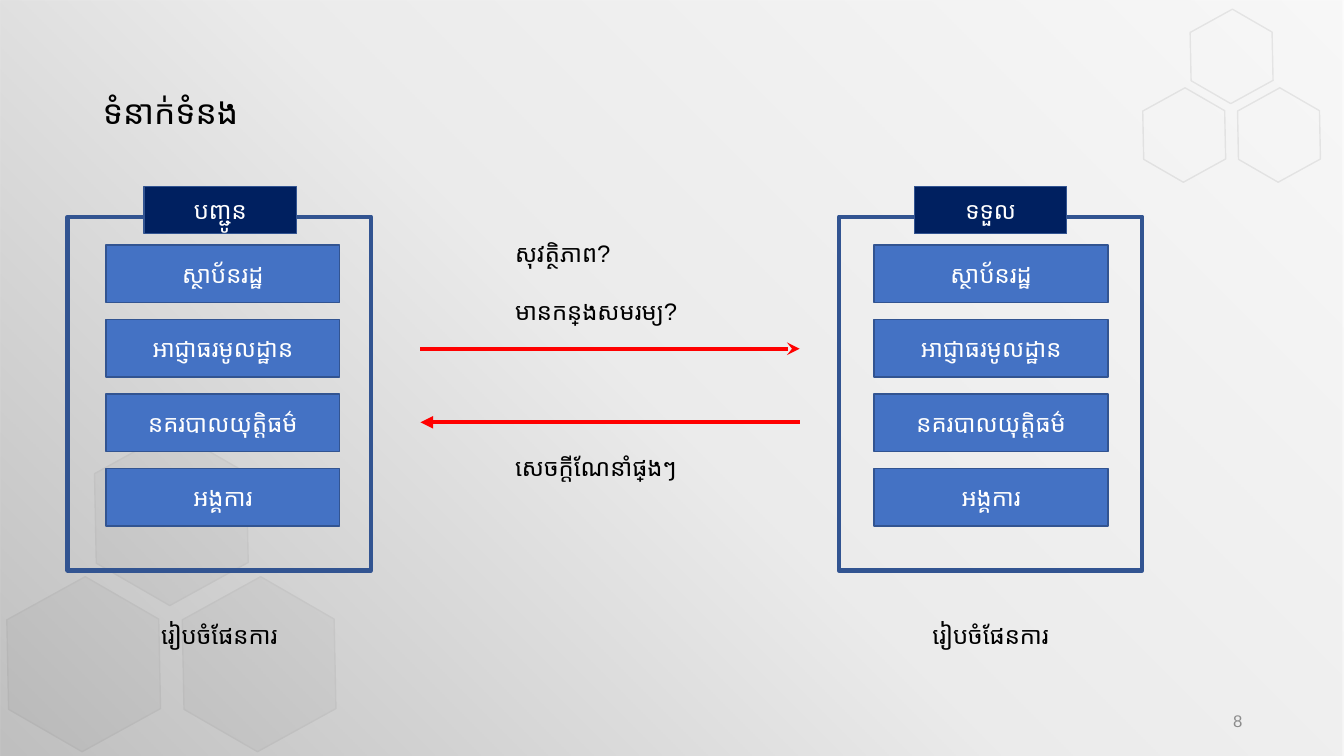
from lxml import etree
from pptx import Presentation
from pptx.dml.color import RGBColor
from pptx.enum.shapes import MSO_CONNECTOR, MSO_SHAPE
from pptx.enum.text import MSO_ANCHOR, PP_ALIGN
from pptx.oxml import parse_xml
from pptx.oxml.ns import qn
from pptx.util import Inches, Pt

RECT, HEXAGON = MSO_SHAPE.RECTANGLE, MSO_SHAPE.HEXAGON
STRAIGHT = MSO_CONNECTOR.STRAIGHT
TOP, MIDDLE = MSO_ANCHOR.TOP, MSO_ANCHOR.MIDDLE
LEFT, CENTER, RIGHT = PP_ALIGN.LEFT, PP_ALIGN.CENTER, PP_ALIGN.RIGHT

BLACK = RGBColor(0x00, 0x00, 0x00)
WHITE = RGBColor(0xFF, 0xFF, 0xFF)
GRAY = RGBColor(0x8C, 0x8C, 0x8C)
SILVER = RGBColor(0xD9, 0xD9, 0xD9)
PALE = RGBColor(0xF2, 0xF2, 0xF2)
PALE_EDGE = RGBColor(0xE7, 0xE6, 0xE6)
BLUE = RGBColor(0x44, 0x72, 0xC4)
EDGE = RGBColor(0x32, 0x54, 0x91)
NAVY = RGBColor(0x00, 0x20, 0x60)
RED = RGBColor(0xFF, 0x00, 0x00)

# Content
TITLE = "ទំនាក់ទំនង"
PAGE_NUMBER = "8"
AGENCIES = ["ស្ថាប័នរដ្ឋ", "អាជ្ញាធរមូលដ្ឋាន", "នគរបាលយុត្តិធម៌", "អង្គការ"]
CAPTION = "រៀបចំផែនការ"
# header, panel left, card left, header left
PANELS = [("បញ្ជូន", 0.67, 1.05, 1.43), ("ទទួល", 8.32, 8.67, 9.07)]
# text, top
NOTES = [("សុវត្ថិភាព?", 2.32), ("មានកន្លែងសមរម្យ?", 2.89),
         ("សេចក្តីណែនាំផ្សេងៗ", 4.44)]
# start x, end x, y, arrowhead
ARROWS = [(4.17, 7.93, 3.46, "stealth"), (7.93, 4.17, 4.19, "triangle")]
# top hexagon left and top, width, height, half step, row step, fill, line
HEX_TRIOS = [(11.74, 0.15, 0.95, 0.82, 0.47, 0.78, None, SILVER),
             (0.82, 4.38, 1.76, 1.52, 0.87, 1.45, PALE, PALE_EDGE)]
# position, colour
WASH_STOPS = [(0, "808080"), (48, "D9D9D9"), (100, "F2F2F2")]
SLIDE_WIDTH, SLIDE_HEIGHT = 13.33, 7.5
CARD_TOP, CARD_STEP = 2.43, 0.74


def write(shape, text, size=17, color=BLACK, font="Arial", align=LEFT, anchor=TOP):
    frame = shape.text_frame
    frame.word_wrap = True
    frame.vertical_anchor = anchor
    para = frame.paragraphs[0]
    para.alignment = align
    span = para.add_run()
    span.text = text
    span.font.size = Pt(size)
    span.font.name = font
    span.font.color.rgb = color


def add_box(page, kind, left, top, width, height, fill=None, line=None, weight=1):
    box = page.shapes.add_shape(kind, Inches(left), Inches(top),
                                Inches(width), Inches(height))
    box.shadow.inherit = False
    if fill is None:
        box.fill.background()
    else:
        box.fill.solid()
        box.fill.fore_color.rgb = fill
    if line is None:
        box.line.fill.background()
    else:
        box.line.color.rgb = line
        box.line.width = Pt(weight)
    return box


def add_label(page, text, left, top, width, height, **style):
    label = page.shapes.add_textbox(Inches(left), Inches(top),
                                    Inches(width), Inches(height))
    write(label, text, **style)


def add_backdrop(page):
    for left, top, width, height, half, row, fill, line in HEX_TRIOS:
        for dx, dy in [(0, 0), (-half, row), (half, row)]:
            cell = add_box(page, HEXAGON, left + dx, top + dy, width, height, fill, line)
            cell.adjustments[0] = 0.302
            cell.rotation = 30
    # Half-transparent gradient over the hexagons
    wash = add_box(page, RECT, 0, 0, SLIDE_WIDTH, SLIDE_HEIGHT)
    stops = "".join(
        f'<a:gs pos="{position * 1000}"><a:srgbClr val="{color}">'
        f'<a:alpha val="50000"/></a:srgbClr></a:gs>'
        for position, color in WASH_STOPS)
    gradient = parse_xml(
        '<a:gradFill xmlns:a="http://schemas.openxmlformats.org/drawingml/2006/main">'
        f'<a:gsLst>{stops}</a:gsLst><a:lin ang="18900000" scaled="0"/></a:gradFill>')
    properties = wash.element.spPr
    properties.replace(properties.find(qn("a:noFill")), gradient)


def add_arrow(page, start, end, y, head):
    arrow = page.shapes.add_connector(STRAIGHT, Inches(start), Inches(y),
                                      Inches(end), Inches(y))
    arrow.line.color.rgb = RED
    arrow.line.width = Pt(3)
    etree.SubElement(arrow.line._get_or_add_ln(), qn("a:tailEnd"), type=head)
    etree.SubElement(arrow.element.spPr, qn("a:effectLst"))


def add_panel(page, header, panel_left, card_left, header_left):
    for index, agency in enumerate(AGENCIES):
        card = add_box(page, RECT, card_left, CARD_TOP + index * CARD_STEP,
                       2.32, 0.57, BLUE, EDGE)
        write(card, agency, color=WHITE, align=CENTER, anchor=MIDDLE)
    add_box(page, RECT, panel_left, 2.15, 3.01, 3.51, line=EDGE, weight=3)
    tab = add_box(page, RECT, header_left, 1.85, 1.51, 0.47, NAVY, EDGE)
    write(tab, header, color=WHITE, align=CENTER, anchor=MIDDLE)
    add_label(page, CAPTION, panel_left, 6.11, 3.01, 0.39, align=CENTER)


def main():
    deck = Presentation()
    deck.slide_width, deck.slide_height = Inches(SLIDE_WIDTH), Inches(SLIDE_HEIGHT)
    page = deck.slides.add_slide(deck.slide_layouts[5])
    add_backdrop(page)

    # Title, raised above the backdrop
    title = page.shapes.title
    title.left, title.top = Inches(0.92), Inches(0.4)
    title.width, title.height = Inches(11.5), Inches(1.45)
    write(title, TITLE, size=24, font="Calibri", anchor=MIDDLE)
    title.text_frame.paragraphs[0].line_spacing = 0.9
    title.element.getparent().append(title.element)

    # Sender, receiver and the exchange between them
    for panel in PANELS:
        add_panel(page, *panel)
    for arrow in ARROWS:
        add_arrow(page, *arrow)
    for text, top in NOTES:
        add_label(page, text, 5.01, top, 2.23, 0.39)
    add_label(page, PAGE_NUMBER, 9.42, 6.95, 3, 0.4,
              size=12, color=GRAY, align=RIGHT, anchor=MIDDLE)
    deck.save("out.pptx")


if __name__ == "__main__":
    main()
